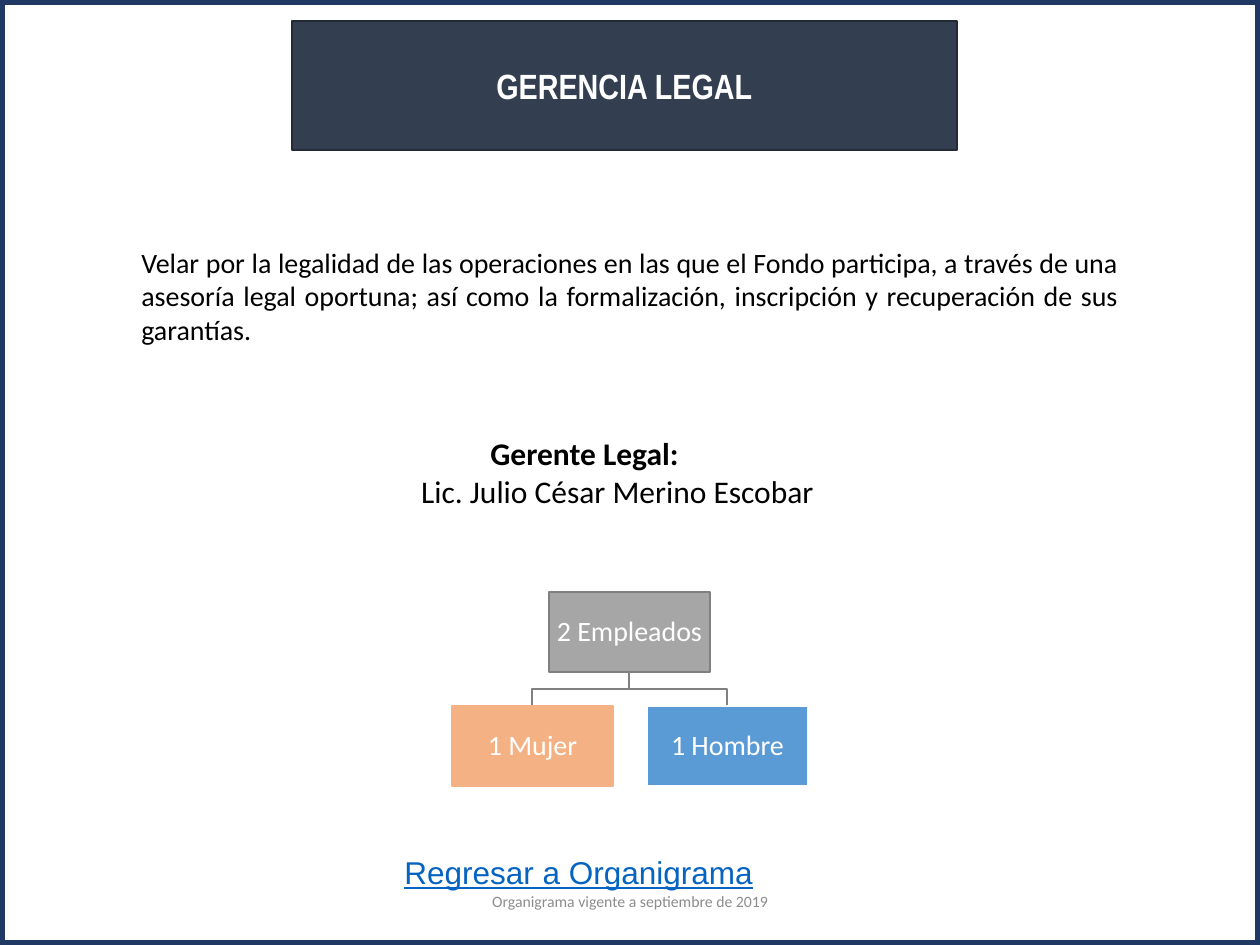
from dataclasses import dataclass

from pptx import Presentation
from pptx import util as u
from pptx.dml.color import RGBColor
from pptx.enum import shapes, text

SCALE = 914400 / 126


def px(length):
    """Turn whole pixels into EMU."""
    return u.Emu(round(length * SCALE))


@dataclass(frozen=True)
class Theme:
    """Colours, fonts and type sizes of the page."""
    navy: str = "203864"
    slate: str = "333F50"
    slate_edge: str = "222A35"
    gray: str = "A6A6A6"
    rule: str = "808080"
    orange: str = "F4B183"
    blue: str = "5B9BD5"
    white: str = "FFFFFF"
    black: str = "000000"
    link: str = "0563C1"
    muted: str = "8C8C8C"
    body_font: str = "Calibri"
    title_font: str = "Arial Narrow"
    link_font: str = "Arial"
    title: int = 20
    name: int = 18
    body: int = 16
    footer: int = 9


class Page:
    """Draw styled elements on one slide."""

    def __init__(self, slide, theme):
        self.shapes = slide.shapes
        self.theme = theme

    def outline(self, shape, color, width=1):
        """Set the line of a shape and drop its shadow."""
        shape.shadow.inherit = False
        shape.line.color.rgb = RGBColor.from_string(color)
        shape.line.width = u.Pt(width)

    def style(self, para, size, color, font=None, bold=False, align=text.PP_ALIGN.CENTER):
        """Set the type of a paragraph."""
        para.alignment = align
        para.font.name = font or self.theme.body_font
        para.font.size = u.Pt(size)
        para.font.bold = bold
        para.font.color.rgb = RGBColor.from_string(color)

    def panel(self, bounds, line, fill=None, width=1):
        """Add a rectangle, filled or hollow."""
        box = self.shapes.add_shape(shapes.MSO_SHAPE.RECTANGLE, *map(px, bounds))
        if fill:
            box.fill.solid()
            box.fill.fore_color.rgb = RGBColor.from_string(fill)
        else:
            box.fill.background()
        self.outline(box, line, width)
        return box

    def label(self, bounds, words, size, color, anchor=text.MSO_ANCHOR.TOP, **style):
        """Add a wrapped text box with one paragraph."""
        frame = self.shapes.add_textbox(*map(px, bounds)).text_frame
        frame.word_wrap = True
        frame.vertical_anchor = anchor
        para = frame.paragraphs[0]
        para.text = words
        self.style(para, size, color, **style)
        return frame

    def title(self, bounds, words):
        """Add the title banner."""
        theme = self.theme
        frame = self.panel(bounds, theme.slate_edge, theme.slate).text_frame
        frame.vertical_anchor = text.MSO_ANCHOR.MIDDLE
        frame.text = words
        self.style(frame.paragraphs[0], theme.title, theme.white, theme.title_font, True)

    def node(self, bounds, words, fill, line):
        """Add one box of the staff chart."""
        frame = self.panel(bounds, line, fill).text_frame
        frame.word_wrap = True
        frame.vertical_anchor = text.MSO_ANCHOR.MIDDLE
        frame.margin_left = frame.margin_right = px(1)
        frame.margin_top = frame.margin_bottom = px(1)
        para = frame.paragraphs[0]
        para.text = words
        para.line_spacing = 0.9
        self.style(para, self.theme.body, self.theme.white)

    def branch(self, start, end):
        """Add a stepped line from a parent down to a child."""
        (left, top), (right, bottom) = start, end
        middle = (top + bottom) // 2
        builder = self.shapes.build_freeform(left, top, scale=SCALE)
        builder.add_line_segments([(left, middle), (right, middle), end], close=False)
        line = builder.convert_to_shape()
        line.fill.background()
        self.outline(line, self.theme.rule)

    def staff_chart(self, parent, children, center, top, size, pitch, drop):
        """Add a parent box with its children spread evenly below."""
        width, height = size
        lower = top + drop
        first = center - pitch * (len(children) - 1) // 2
        middles = [first + pitch * index for index in range(len(children))]
        for middle in middles:
            self.branch((center, top + height), (middle, lower))
        self.node((center - width // 2, top, width, height), *parent)
        for middle, child in zip(middles, children):
            self.node((middle - width // 2, lower, width, height), *child)


def main():
    """Build the legal department page."""
    theme = Theme()
    deck = Presentation()
    deck.slide_width, deck.slide_height = px(1260), px(945)
    page = Page(deck.slides.add_slide(deck.slide_layouts[6]), theme)

    page.panel((0, 0, 1260, 945), theme.navy, width=6)
    link = page.label((392, 847, 412, 50), "Regresar a Organigrama", theme.name, theme.link,
                      font=theme.link_font, align=text.PP_ALIGN.LEFT)
    link.paragraphs[0].font.underline = True
    page.title((292, 21, 665, 129), "GERENCIA LEGAL")

    manager = page.label((382, 428, 471, 127), "Gerente Legal:", theme.name, theme.black,
                         bold=True, align=text.PP_ALIGN.LEFT)
    manager.paragraphs[0]._p.get_or_add_pPr().set("marL", str(px(96)))
    name = manager.add_paragraph()
    name.text = "Lic. Julio César Merino Escobar"
    page.style(name, theme.name, theme.black)

    page.staff_chart(
        ("2 Empleados", theme.gray, theme.rule),
        [("1 Mujer", theme.orange, theme.orange), ("1 Hombre", theme.blue, theme.white)],
        center=629, top=592, size=(161, 80), pitch=195, drop=114)

    page.label((129, 239, 1002, 115),
               "Velar por la legalidad de las operaciones en las que el Fondo participa, "
               "a través de una asesoría legal oportuna; así como la formalización, "
               "inscripción y recuperación de sus garantías.",
               theme.body, theme.black, align=text.PP_ALIGN.JUSTIFY)
    page.label((417, 876, 426, 50), "Organigrama vigente a septiembre de 2019",
               theme.footer, theme.muted, anchor=text.MSO_ANCHOR.MIDDLE)
    deck.save("out.pptx")


if __name__ == "__main__":
    main()
